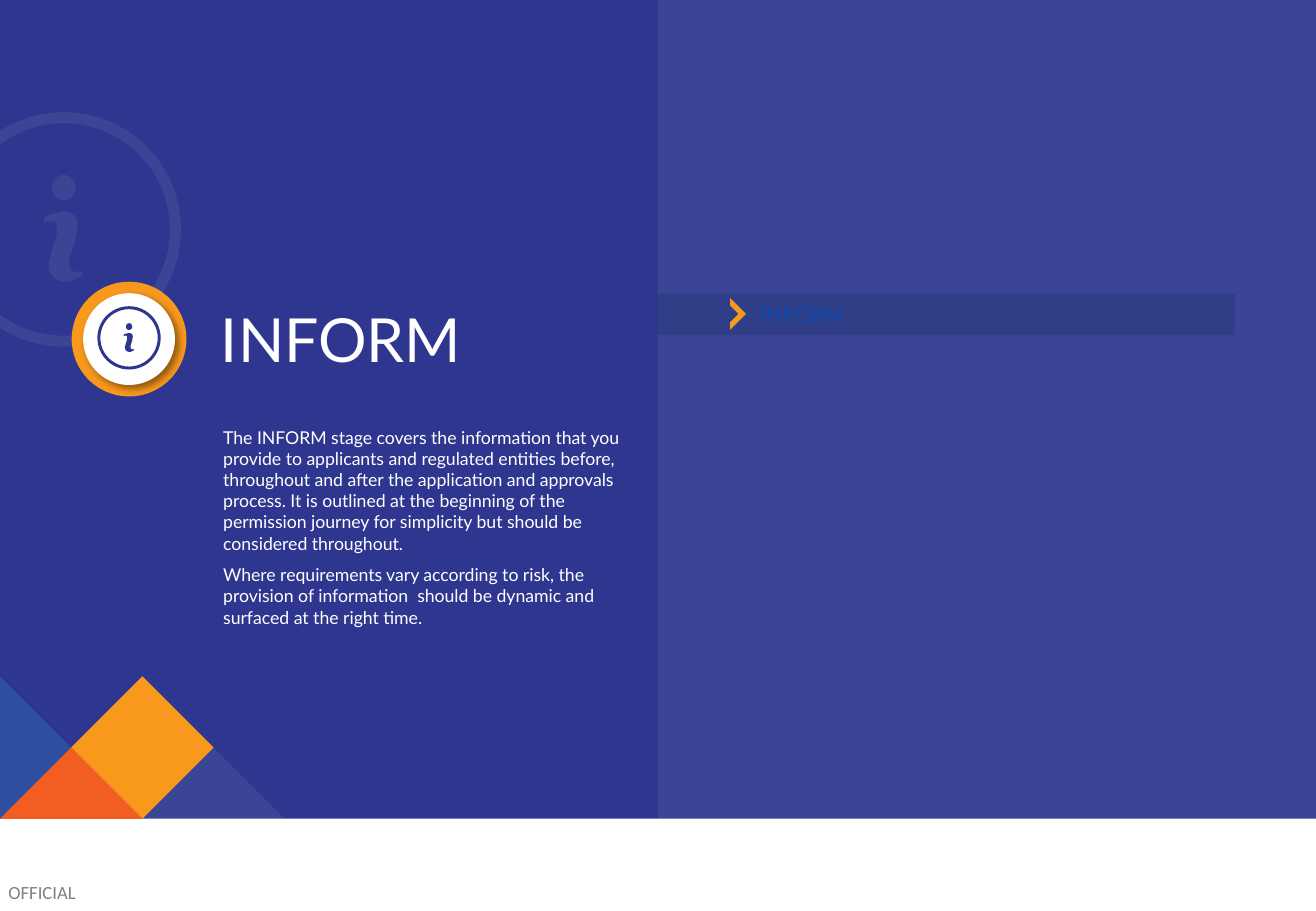
from dataclasses import dataclass
from lxml.etree import SubElement as Sub
from pptx import Presentation
from pptx.dml.color import RGBColor as Rgb
from pptx.enum.shapes import MSO_SHAPE as Kind
from pptx.enum.text import MSO_ANCHOR as Anchor, MSO_AUTO_SIZE as Fit, PP_ALIGN as Align
from pptx.oxml.ns import qn
from pptx.util import Pt

HUES = {
    "navy": "2E368F", "white": "FFFFFF", "gold": "F8981D", "red": "F25E21",
    "sky": "25B3E0", "ink": "00264D", "link": "0F4AB0", "grey": "7F7F7F",
    "black": "000000",
}
WIDE, HIGH, BASE, HALF = 780, 540, 485.3, 390
STEP = 42.2
BAR = (HALF, 174.2, 342, 24.5)

STEM = [
    (7.6, 25.2), (4.7, 24.5), (3.2, 21.6), (3.2, 18.7), (4, 15.1), (7.6, 3.6),
    (7.6, 0.7), (8.3, -2.2), (7.6, -6.5), (6.1, -8.6), (3.2, -10.1),
    (-0.4, -10.8), (-6.1, -9.4), (-11.2, -7.9), (-11.9, -3.6), (-10.4, -4.3),
    (-8.3, -5), (-4.7, -4.3), (-4, -0.7), (-4, 2.2), (-4.7, 5), (-8.3, 17.3),
    (-9, 20.2), (-9, 23), (-7.6, 26.6), (-6.1, 28.1), (-3.2, 30.2), (0.4, 31),
    (5.4, 30.2), (10.4, 27.4), (11.9, 24.5), (9.7, 25.2),
]

STAGE = [
    "The INFORM stage covers the information that you provide to applicants and "
    "regulated entities before, throughout and after the application and approvals "
    "process. It is outlined at the beginning of the permission journey for "
    "simplicity but should be considered throughout.",
    "Where requirements vary according to risk, the provision of information  "
    "should be dynamic and surfaced at the right time.",
]


@dataclass
class Block:
    kind: Kind
    box: tuple[float, float, float, float]
    hue: str
    alpha: int = 100
    turn: float = 0
    adj: tuple[float, ...] = ()


@dataclass
class Tile:
    spots: list[tuple[float, float]]
    hue: str
    alpha: int = 100


@dataclass
class Badge:
    x: float
    y: float
    scale: float
    hue: str
    alpha: int = 100


def paint(shape, hue: str, alpha: int) -> None:
    shape.shadow.inherit = False
    shape.line.fill.background()
    shape.fill.solid()
    shape.fill.fore_color.rgb = Rgb.from_string(HUES[hue])
    if alpha < 100:
        tint = shape.element.spPr.find(".//" + qn("a:srgbClr"))
        Sub(tint, qn("a:alpha"), val=str(alpha * 1000))


def block(shapes, spec_: Block):
    shape = shapes.add_shape(spec_.kind, *map(Pt, spec_.box))
    shape.rotation = spec_.turn
    for rank, part in enumerate(spec_.adj):
        shape.adjustments[rank] = part
    paint(shape, spec_.hue, spec_.alpha)
    return shape


def tile(shapes, item: Tile) -> None:
    spots = [(Pt(x), Pt(y)) for x, y in item.spots]
    form = shapes.build_freeform(*spots[0])
    form.add_line_segments(spots[1:], close=True)
    paint(form.convert_to_shape(), item.hue, item.alpha)


def badge(shapes, item: Badge) -> None:
    def disc(kind: Kind, rise: float, wide: float, high: float, *adj: float) -> None:
        size = item.scale
        box = (item.x - wide * size / 2, item.y - (rise + high / 2) * size,
               wide * size, high * size)
        block(shapes, Block(kind, box, item.hue, item.alpha, adj=adj))

    disc(Kind.DONUT, 0, 139, 139, 0.047)
    disc(Kind.OVAL, 24.8, 14, 15)
    spots = [(item.x + x * item.scale, item.y + y * item.scale) for x, y in STEM]
    tile(shapes, Tile(spots, item.hue, item.alpha))


def shade(shape) -> None:
    glow = Sub(shape.element.spPr.find(qn("a:effectLst")), qn("a:outerShdw"),
               blurRad=str(Pt(4)), dist=str(Pt(3)), dir=str(45 * 60000),
               algn="tl", rotWithShape="0")
    tint = Sub(glow, qn("a:srgbClr"), val=HUES["black"])
    Sub(tint, qn("a:alpha"), val="40000")


def write(shape, text: list[str], *, box: tuple, size: float, hue: str = "white",
          font: str = "Lato", inset: float = 0, anchor: Anchor = Anchor.TOP,
          gap: float = 0, wrap: bool = True) -> None:
    shape.left, shape.top, shape.width, shape.height = map(Pt, box)
    frame = shape.text_frame
    frame.text = "\n".join(text)
    frame.auto_size = Fit.NONE
    frame.word_wrap = wrap
    frame.vertical_anchor = anchor
    frame.margin_left = frame.margin_right = 0
    frame.margin_top = frame.margin_bottom = Pt(inset)
    for rank, para in enumerate(frame.paragraphs):
        props = para._p.get_or_add_pPr()
        props.set("marL", "0")
        props.set("indent", "0")
        Sub(props, qn("a:buNone"))
        para.alignment = Align.LEFT
        para.line_spacing = 1.0
        para.space_before = Pt(gap if rank else 0)
        para.font.name = font
        para.font.size = Pt(size)
        para.font.color.rgb = Rgb.from_string(HUES[hue])


def main() -> None:
    deck = Presentation()
    deck.slide_width, deck.slide_height = Pt(WIDE), Pt(HIGH)
    slide = deck.slides.add_slide(deck.slide_layouts[1])
    shapes = slide.shapes
    title, body = shapes.title, slide.placeholders[1]

    block(shapes, Block(Kind.RECTANGLE, (0, 0, WIDE, BASE), "navy"))
    badge(shapes, Badge(37.8, 136, 1, "white", 7))
    block(shapes, Block(Kind.RECTANGLE, (HALF, 0, HALF, BASE), "white", 7))
    block(shapes, Block(Kind.OVAL, (42.5, 167, 68, 68), "gold"))
    shade(block(shapes, Block(Kind.OVAL, (49.3, 173.8, 54.4, 54.4), "white")))
    badge(shapes, Badge(76.5, 200.3, 0.27, "navy"))

    for grid, hue, alpha in (
        ([(1, 1), (2, 2), (3, 1), (2, 0)], "gold", 100),
        ([(0, 2), (0, 0), (1, 1)], "sky", 20),
        ([(2, 0), (3, 1), (4, 0)], "white", 7),
        ([(0, 0), (1, 1), (2, 0)], "red", 100),
    ):
        tile(shapes, Tile([(x * STEP, BASE - y * STEP) for x, y in grid], hue, alpha))

    block(shapes, Block(Kind.FLOWCHART_PROCESS, BAR, "ink", 20))
    block(shapes, Block(Kind.HALF_FRAME, (426.2, 179.4, 13.2, 13.2), "gold",
                        turn=135, adj=(0.24, 0.24)))

    tree = title.element.getparent()
    for holder in (title, body):
        tree.append(holder.element)
    write(title, ["INFORM"], box=(131, 167, 155, 67), size=36, anchor=Anchor.MIDDLE)
    write(body, STAGE, box=(132.3, 249.1, 241.2, 136.8), size=10.5, inset=3.6, gap=6)

    label = shapes.add_textbox(0, 0, 0, 0)
    write(label, ["INFORM"], box=(450.5, BAR[1], 270, BAR[3]), size=12.5,
          hue="link", anchor=Anchor.MIDDLE)
    mark = shapes.add_textbox(0, 0, 0, 0)
    write(mark, ["OFFICIAL"], box=(5, 522, 43, 13), size=11, hue="grey",
          font="Calibri", wrap=False)
    deck.save("out.pptx")


if __name__ == "__main__":
    main()
